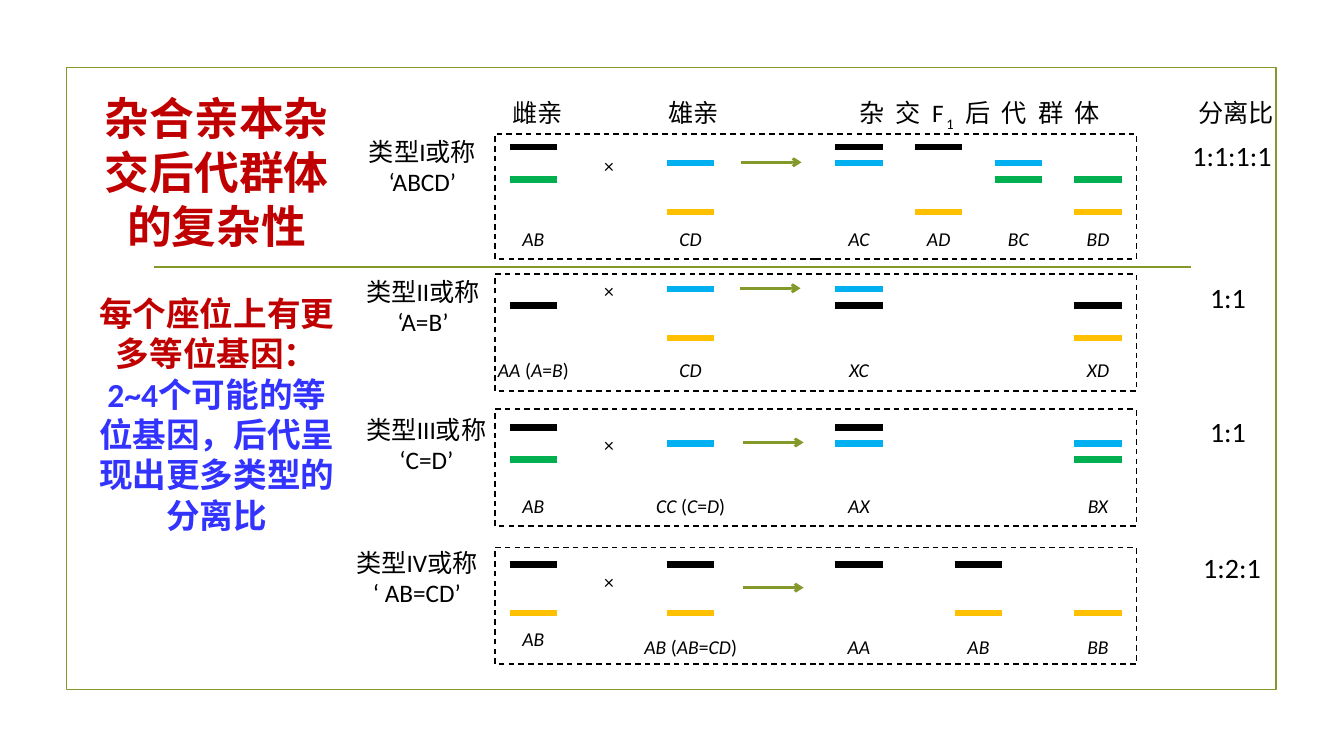
from itertools import groupby
from lxml.etree import SubElement
from pptx import Presentation
from pptx.dml.color import RGBColor
from pptx.enum.dml import MSO_LINE
from pptx.enum.shapes import MSO_CONNECTOR, MSO_SHAPE
from pptx.enum.text import MSO_ANCHOR, MSO_AUTO_SIZE, PP_ALIGN
from pptx.oxml.ns import qn
from pptx.util import Inches, Pt

BLACK, OLIVE, RED, BLUE = "000000", "83992A", "C00000", "3333FF"
INKS = {"K": BLACK, "G": "00B050", "B": "00B0F0", "O": "FFC000"}

TITLE = [
    (0, [("杂合亲本杂交后代群体的复杂性", 32, "Calibri", RED)]),
    (29, [("每个座位上有", 24, "Calibri", RED),
          ("更多等位基因：", 24, "Times New Roman", RED)]),
    (0, [("2~4个可能的等位基因，后代呈现出更多类型的分离比", 24, "Calibri", BLUE)]),
]

HEADS = [(5.33, "雌亲"), (6.88, "雄亲"), (12.26, "分离比")]
CROSS = [("杂 交 F", 0), ("1", -25000), (" 后 代 群 体", 0)]

DAM, SIRE, CHILD, STEP = 5.29, 6.85, 8.52, 0.79
BAND, RUNG = 0.47, 0.16

# Columns of a sample: place, name, bands as ink and rung, name lift
ROWS = [
    dict(box=(1.33, 1.24), tag=("类型I或称", "‘ABCD’"), tag_at=(3.48, 1.3, 1.42),
         ratio="1:1:1:1", ratio_at=(12.22, 1.33), base=1.46, name=2.2,
         sign=1.48, arrow=(7.35, 1.61),
         lanes=[(DAM, "AB", "K0 G2", 0), (SIRE, "CD", "B1 O4", 0),
                (CHILD, "AC", "K0 B1", 0), (CHILD + STEP, "AD", "K0 O4", 0),
                (CHILD + 2 * STEP, "BC", "B1 G2", 0),
                (CHILD + 3 * STEP, "BD", "G2 O4", 0)]),
    dict(box=(2.72, 1.16), tag=("类型II或称", "‘A=B’"), tag_at=(3.48, 2.69, 1.43),
         ratio="1:1", ratio_at=(12.18, 2.73), base=2.87, name=3.5,
         sign=2.72, arrow=(7.34, 2.86),
         lanes=[(DAM, "AA (A=B)", "K1", 0), (SIRE, "CD", "B0 O3", 0),
                (CHILD, "XC", "B0 K1", 0),
                (CHILD + 3 * STEP, "XD", "K1 O3", 0)]),
    dict(box=(4.06, 1.16), tag=("类型III或称", "‘C=D’"), tag_at=(3.48, 4.06, 1.5),
         ratio="1:1", ratio_at=(12.18, 4.06), base=4.24, name=4.85,
         sign=4.25, arrow=(7.37, 4.39),
         lanes=[(DAM, "AB", "K0 G2", 0), (SIRE, "CC (C=D)", "B1", 0),
                (CHILD, "AX", "K0 B1", 0),
                (CHILD + 3 * STEP, "BX", "B1 G2", 0)]),
    dict(box=(5.43, 1.16), tag=("类型IV或称", "‘ AB=CD’"), tag_at=(3.36, 5.38, 1.55),
         ratio="1:2:1", ratio_at=(12.22, 5.41), base=5.6, name=6.25,
         sign=5.61, arrow=(7.37, 5.83),
         lanes=[(DAM, "AB", "K0 O3", 0.08), (SIRE, "AB (AB=CD)", "K0 O3", 0),
                (CHILD, "AA", "K0", 0), (CHILD + 1.5 * STEP, "AB", "K0 O3", 0),
                (CHILD + 3 * STEP, "BB", "O3", 0)]),
]


def paint(hue):
    return RGBColor.from_string(hue)


def add_run(para, text, size, face="Calibri", hue=BLACK, bold=False, slant=False):
    run = para.add_run()
    run.text = text
    font = run.font
    font.size, font.name = Pt(size), face
    font.bold, font.italic = bold, slant
    font.color.rgb = paint(hue)
    return run


def add_box(slide, left, top, width, height, wrap=False):
    box = slide.shapes.add_textbox(Inches(left), Inches(top), Inches(width), Inches(height))
    frame = box.text_frame
    frame.word_wrap = wrap
    para = frame.paragraphs[0]
    para.alignment = PP_ALIGN.CENTER
    return frame, para


def add_word(slide, mid, top, text, size, width=1.2):
    frame, para = add_box(slide, mid - width / 2, top, width, 0.4)
    add_run(para, text, size)


def add_name(slide, mid, top, text):
    frame, para = add_box(slide, mid - 0.74, top, 1.48, 0.34)
    for slant, part in groupby(text, str.isalpha):
        add_run(para, "".join(part), 14, slant=slant)


def add_line(slide, left, top, width, hue, weight, arrow=False):
    line = slide.shapes.add_connector(
        MSO_CONNECTOR.STRAIGHT, Inches(left), Inches(top), Inches(left + width), Inches(top))
    line.line.color.rgb = paint(hue)
    line.line.width = Pt(weight)
    if arrow:
        SubElement(line.line._get_or_add_ln(), qn("a:tailEnd"), type="arrow")
    SubElement(line._element.spPr, qn("a:effectLst"))


def add_frame(slide, left, top, width, height, hue, weight, dash=None):
    shape = slide.shapes.add_shape(
        MSO_SHAPE.RECTANGLE, Inches(left), Inches(top), Inches(width), Inches(height))
    shape.shadow.inherit = False
    shape.fill.background()
    shape.line.color.rgb = paint(hue)
    shape.line.width = Pt(weight)
    if dash:
        shape.line.dash_style = dash


def add_title(slide):
    title = slide.shapes.title
    title.left, title.top = Inches(0.84), Inches(0.68)
    title.width, title.height = Inches(2.62), Inches(4.85)
    frame = title.text_frame
    frame.auto_size = MSO_AUTO_SIZE.NONE
    frame.word_wrap = True
    frame.vertical_anchor = MSO_ANCHOR.MIDDLE
    for i, (gap, runs) in enumerate(TITLE):
        para = frame.add_paragraph() if i else frame.paragraphs[0]
        para.alignment = PP_ALIGN.CENTER
        if gap:
            para.space_before = Pt(gap)
        for text, size, face, hue in runs:
            add_run(para, text, size, face, hue, bold=True)


def add_heads(slide):
    for mid, text in HEADS:
        add_word(slide, mid, 0.92, text, 18)
    frame, para = add_box(slide, 8.28, 0.92, 2.87, 0.4)
    for text, drop in CROSS:
        props = add_run(para, text, 18).font._element
        props.set("spc", "200")
        if drop:
            props.set("baseline", str(drop))


def add_row(slide, row):
    for mid, name, bands, lift in row["lanes"]:
        for ink, rung in bands.split():
            add_line(slide, mid - BAND / 2, row["base"] + int(rung) * RUNG,
                     BAND, INKS[ink], 4.5)
        add_name(slide, mid, row["name"] - lift, name)
    add_word(slide, 6.04, row["sign"], "×", 14, 0.54)
    add_line(slide, *row["arrow"], 0.6, OLIVE, 2, arrow=True)
    left, top, width = row["tag_at"]
    frame, para = add_box(slide, left, top, width, 0.71, wrap=True)
    add_run(para, row["tag"][0], 18)
    para = frame.add_paragraph()
    para.alignment = PP_ALIGN.CENTER
    add_run(para, row["tag"][1], 18)
    add_word(slide, *row["ratio_at"], row["ratio"], 20, 1.26)
    top, height = row["box"]
    add_frame(slide, 4.91, top, 6.36, height, BLACK, 1, MSO_LINE.DASH)


def main():
    deck = Presentation()
    deck.slide_width, deck.slide_height = Inches(13.33), Inches(7.5)
    slide = deck.slides.add_slide(deck.slide_layouts[5])
    add_frame(slide, 0.66, 0.67, 12, 6.17, OLIVE, 1.25)
    add_line(slide, 1.53, 2.65, 10.28, OLIVE, 1.25)
    add_title(slide)
    add_heads(slide)
    for row in ROWS:
        add_row(slide, row)
    deck.save("out.pptx")


if __name__ == "__main__":
    main()
